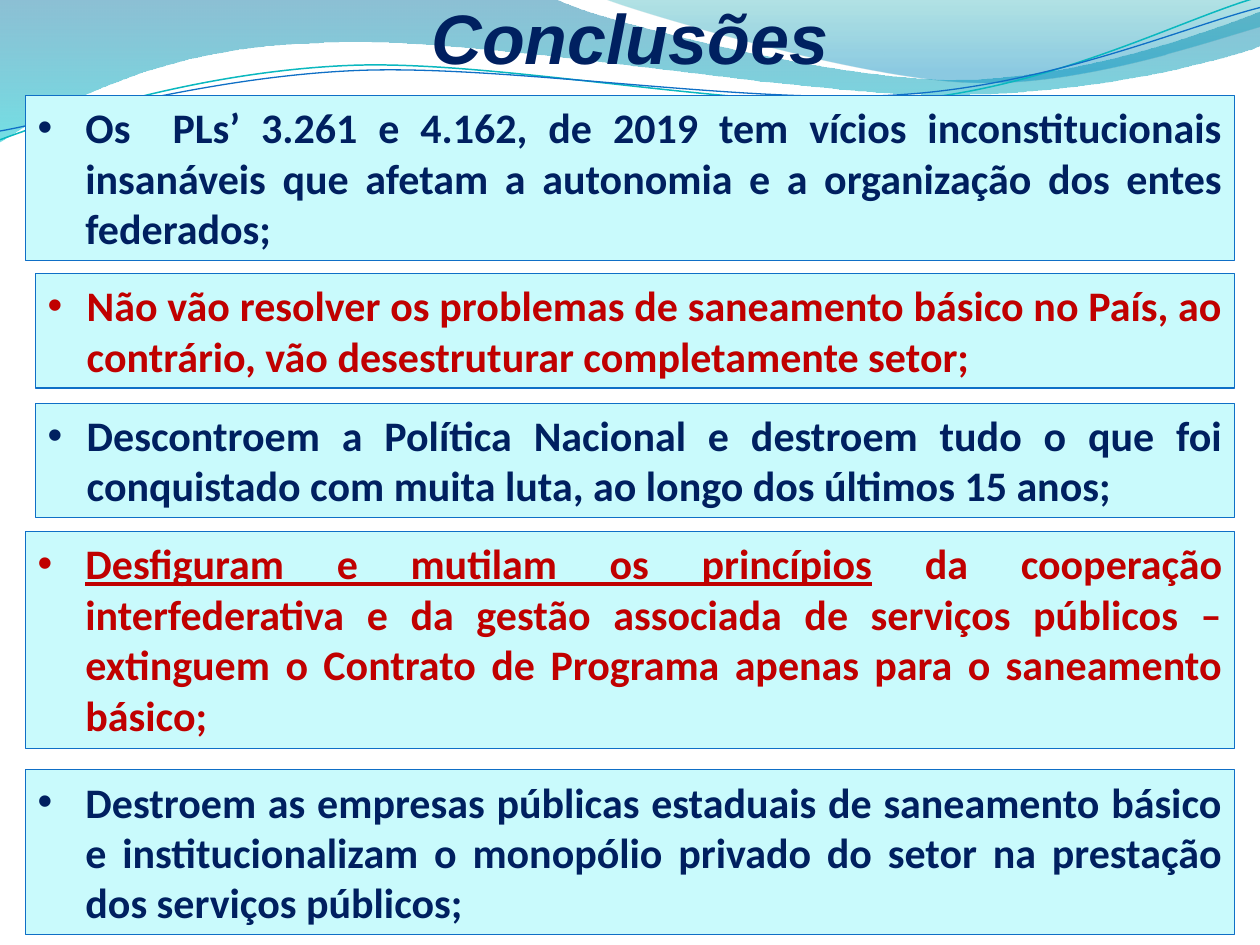
from lxml.etree import SubElement
from pptx import Presentation
from pptx.dml.color import RGBColor
from pptx.enum.shapes import MSO_SHAPE
from pptx.enum.text import MSO_ANCHOR, MSO_AUTO_SIZE, PP_ALIGN as Align
from pptx.oxml.ns import qn
from pptx.util import Inches, Pt

COLORS = {
    "navy": "002060", "red": "C00000", "pale": "C9FAFC", "blue": "0F6FC6",
    "teal": "0AB8BF", "deep": "0074A1", "aqua": "00C6CF",
    "green": "00A1A9", "azure": "008BBF",
}

# Header waves: start point, then segments of one point (line) or three (curve)
WAVE_LEFT = [
    (0, 0), [(4.4, -0.01)],
    [(4.76, 0.17), (6.64, 0.63), (7.58, 0.63)],
    [(8.53, 0.63), (9.58, 0.26), (10, 0.09)], [(10.01, 0.36)],
    [(9.83, 0.44), (8.7, 0.76), (7.46, 0.75)],
    [(6.22, 0.75), (3.82, 0.28), (2.57, 0.34)],
    [(1.29, 0.36), (0.46, 0.83), (-0.01, 1.13)], [(0, 0)],
]
WAVE_RIGHT = [
    (4.79, -0.01),
    [(5.09, 0.11), (6.82, 0.62), (7.69, 0.65)],
    [(8.56, 0.69), (9.61, 0.32), (10, 0.21)], [(10, 0)], [(4.79, -0.01)],
]
TEAL_LINE = [
    (0, 1.11),
    [(0.48, 0.93), (1.58, 0.57), (2.77, 0.52)],
    [(3.95, 0.47), (5.93, 0.89), (7.13, 0.8)],
    [(8.33, 0.71), (9.38, 0.15), (9.98, -0.02)],
]
BLUE_LINE = [
    (0, 1.04),
    [(0.47, 0.96), (1.64, 0.61), (2.83, 0.56)],
    [(4.03, 0.51), (5.97, 0.84), (7.17, 0.75)],
    [(8.36, 0.67), (9.41, 0.21), (10, 0.06)],
]

# Conclusions: left, top, height, bullet indent, colour, underlined start, text
RIGHT_EDGE = 9.8
CONCLUSIONS = [
    (0.2, 0.76, 1.31, 0.38, "navy", "",
     "Os  PLs’ 3.261 e 4.162, de 2019 tem vícios inconstitucionais insanáveis "
     "que afetam a autonomia e a organização dos entes federados;"),
    (0.28, 2.17, 0.91, 0.31, "red", "",
     "Não vão resolver os problemas de saneamento básico no País, ao "
     "contrário, vão desestruturar completamente setor;"),
    (0.28, 3.2, 0.91, 0.31, "navy", "",
     "Descontroem a Política Nacional e destroem tudo o que foi conquistado "
     "com muita luta, ao longo dos últimos 15 anos;"),
    (0.2, 4.22, 1.72, 0.38, "red", "Desfiguram e mutilam os princípios",
     " da cooperação interfederativa e da gestão associada de serviços "
     "públicos – extinguem o Contrato de Programa apenas para o saneamento "
     "básico;"),
    (0.2, 6.11, 1.31, 0.38, "navy", "",
     "Destroem as empresas públicas estaduais de saneamento básico e "
     "institucionalizam o monopólio privado do setor na prestação dos "
     "serviços públicos;"),
]


def rgb(name):
    return RGBColor.from_string(COLORS[name])


def add_text(paragraph, text, *, size, font, color, italic=False, underline=False):
    run = paragraph.add_run()
    run.text = text
    run.font.size = Pt(size)
    run.font.name = font
    run.font.color.rgb = rgb(color)
    run.font.bold = True
    run.font.italic = italic
    run.font.underline = underline


def add_outline(slide, outline, close):
    start, *segments = outline
    builder = slide.shapes.build_freeform(Inches(start[0]), Inches(start[1]))
    builder.add_line_segments(
        [(Inches(x), Inches(y)) for segment in segments for x, y in segment],
        close=close)
    shape = builder.convert_to_shape()
    shape.shadow.inherit = False
    # Join each run of three points into one Bézier curve
    lines = iter(list(shape._element.iter(qn("a:lnTo"))))
    for segment in segments:
        parts = [next(lines) for _ in segment]
        if len(parts) == 3:
            first, *others = parts
            first.tag = qn("a:cubicBezTo")
            for part in others:
                first.append(part[0])
                part.getparent().remove(part)
    return shape


def add_wave(slide, outline, stops):
    wave = add_outline(slide, outline, close=True)
    wave.line.fill.background()
    wave.fill.gradient()
    wave.fill.gradient_angle = 270  # top to bottom
    for stop, (position, color, _) in zip(wave.fill.gradient_stops, stops):
        stop.position = position
        stop.color.rgb = rgb(color)
    # Opacity of each stop
    clrs = wave._element.spPr.iter(qn("a:srgbClr"))
    for clr, (_, _, opacity) in zip(clrs, stops):
        SubElement(clr, qn("a:alpha")).set("val", str(opacity * 1000))


def add_wave_line(slide, outline, color, width):
    curve = add_outline(slide, outline, close=False)
    curve.fill.background()
    curve.line.color.rgb = rgb(color)
    curve.line.width = Pt(width)


def set_title(slide, text):
    title = slide.shapes.title
    title.left, title.top = Inches(0.2), Inches(0.05)
    title.width, title.height = Inches(9.6), Inches(0.63)
    frame = title.text_frame
    frame.auto_size = MSO_AUTO_SIZE.NONE
    frame.vertical_anchor = MSO_ANCHOR.BOTTOM
    paragraph = frame.paragraphs[0]
    paragraph.alignment = Align.CENTER
    paragraph.line_spacing = 0.9
    add_text(paragraph, text, size=40, font="Arial", color="navy", italic=True)
    # Bring the title in front of the waves
    slide.shapes._spTree.append(title._element)


def add_bullet(paragraph, indent):
    pPr = paragraph._p.get_or_add_pPr()
    pPr.set("marL", str(Inches(indent)))
    pPr.set("indent", str(-Inches(indent)))
    SubElement(pPr, qn("a:buFont")).set("typeface", "Arial")
    SubElement(pPr, qn("a:buChar")).set("char", "•")


def add_conclusion(slide, left, top, height, indent, color, lead, text):
    box = slide.shapes.add_shape(
        MSO_SHAPE.RECTANGLE, Inches(left), Inches(top),
        Inches(RIGHT_EDGE - left), Inches(height))
    box.shadow.inherit = False
    box.fill.solid()
    box.fill.fore_color.rgb = rgb("pale")
    box.line.color.rgb = rgb("blue")
    box.line.width = Pt(0.75)
    frame = box.text_frame
    frame.word_wrap = True
    frame.auto_size = MSO_AUTO_SIZE.SHAPE_TO_FIT_TEXT
    frame.vertical_anchor = MSO_ANCHOR.TOP
    paragraph = frame.paragraphs[0]
    paragraph.alignment = Align.JUSTIFY
    add_bullet(paragraph, indent)
    if lead:
        add_text(paragraph, lead, size=24, font="Calibri", color=color, underline=True)
    add_text(paragraph, text, size=24, font="Calibri", color=color)


def main():
    deck = Presentation()
    deck.slide_width, deck.slide_height = Inches(10), Inches(7.5)
    slide = deck.slides.add_slide(deck.slide_layouts[5])

    # Header decoration
    add_wave(slide, WAVE_LEFT, [(0, "deep", 45), (1, "aqua", 55)])
    add_wave(slide, WAVE_RIGHT, [(0, "green", 30), (0.8, "azure", 45)])
    add_wave_line(slide, TEAL_LINE, "teal", 0.85)
    add_wave_line(slide, BLUE_LINE, "blue", 0.75)

    # Title and conclusions
    set_title(slide, "Conclusões")
    for conclusion in CONCLUSIONS:
        add_conclusion(slide, *conclusion)

    deck.save("out.pptx")


if __name__ == "__main__":
    main()
